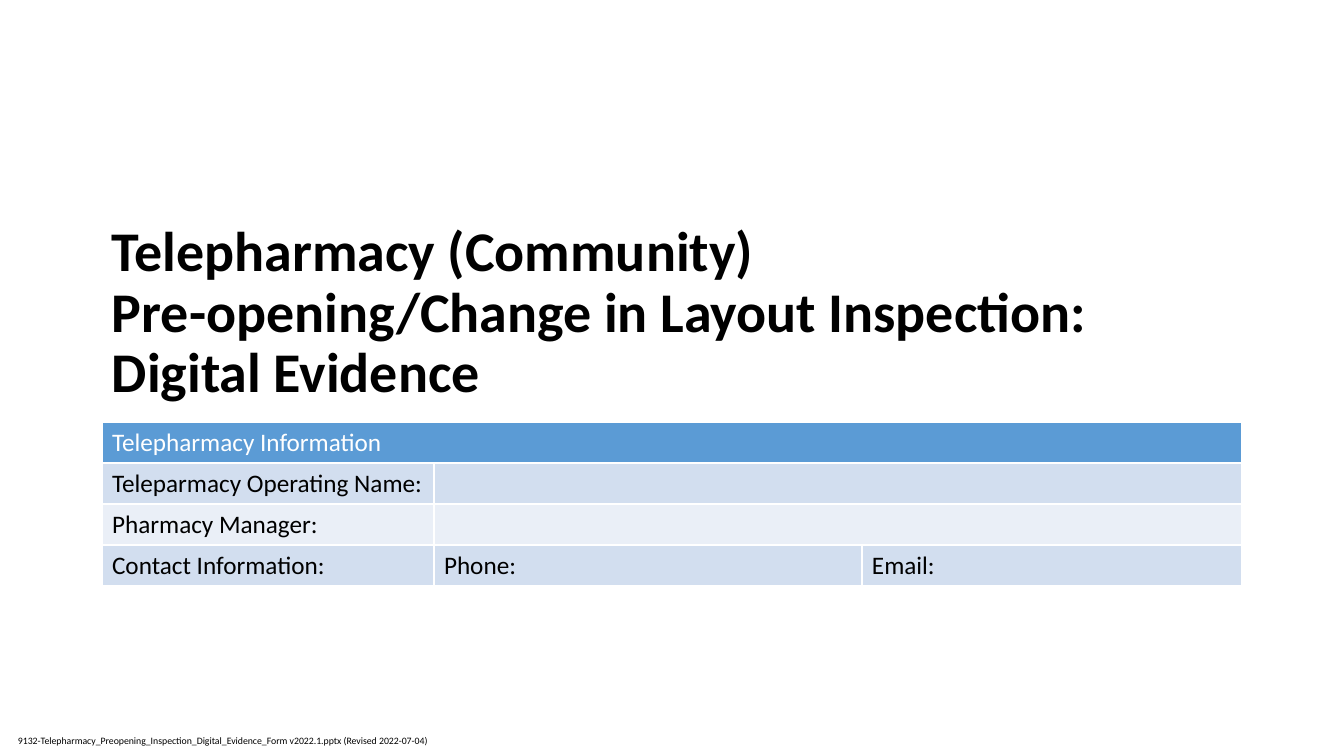
from pptx import Presentation
from pptx.dml.color import RGBColor
from pptx.enum.text import MSO_ANCHOR
from pptx.util import Pt

PX = 914400 / 100.8
TOP, BOTTOM = MSO_ANCHOR.TOP, MSO_ANCHOR.BOTTOM
BLACK = RGBColor(0x00, 0x00, 0x00)
WHITE = RGBColor(0xFF, 0xFF, 0xFF)
BLUE = RGBColor(0x5B, 0x9B, 0xD5)
LIGHT = RGBColor(0xD2, 0xDE, 0xEF)
PALE = RGBColor(0xEA, 0xEF, 0xF7)

TITLE = """Telepharmacy (Community)
Pre-opening/Change in Layout Inspection:
Digital Evidence"""
FOOTER = ("9132-Telepharmacy_Preopening_Inspection_Digital_Evidence_Form "
          "v2022.1.pptx (Revised 2022-07-04)")
ROWS = [
    ["Telepharmacy Information"],
    ["Teleparmacy Operating Name:", ""],
    ["Pharmacy Manager:", ""],
    ["Contact Information:", "Phone:", "Email:"],
]
FILLS = [BLUE, LIGHT, PALE, LIGHT]
COLS = [332, 428, 380]
ROW = 41


def px(*sizes):
    """Turn pixel lengths into whole EMU."""
    return [round(size * PX) for size in sizes]


def write(frame, text, size=18, color=BLACK, bold=False, space=1.0):
    """Put formatted text into the first paragraph of a frame."""
    para = frame.paragraphs[0]
    para.text = text
    para.line_spacing = space
    for run in para.runs:
        font = run.font
        font.name, font.size, font.bold = "Calibri", Pt(size), bold
        font.color.rgb = color


def label(slide, box, text, anchor=TOP, **style):
    """Add a wrapped text box."""
    frame = slide.shapes.add_textbox(*px(*box)).text_frame
    frame.word_wrap = True
    frame.vertical_anchor = anchor
    write(frame, text, **style)


def form(slide, left, top):
    """Add the information table, widening the last cell of short rows."""
    box = px(left, top, sum(COLS), ROW * len(ROWS))
    table = slide.shapes.add_table(len(ROWS), len(COLS), *box).table
    for col, width in zip(table.columns, px(*COLS)):
        col.width = width
    for r, (texts, fill) in enumerate(zip(ROWS, FILLS)):
        table.rows[r].height = px(ROW)[0]
        last = len(texts) - 1
        if len(texts) < len(COLS):
            table.cell(r, last).merge(table.cell(r, len(COLS) - 1))
        for c in range(len(COLS)):
            cell = table.cell(r, c)
            cell.fill.solid()
            cell.fill.fore_color.rgb = fill
            if c <= last:
                write(cell.text_frame, texts[c],
                      color=BLACK if r else WHITE)


def cover(deck):
    """Build the cover slide with footer, title and form."""
    slide = deck.slides.add_slide(deck.slide_layouts[6])
    label(slide, (8, 730, 458, 22), FOOTER, size=7)
    label(slide, (102, 147, 1140, 263), TITLE, anchor=BOTTOM,
          size=40, bold=True, space=0.9)
    form(slide, 102, 422)


def main():
    """Create and save the deck."""
    deck = Presentation()
    deck.slide_width, deck.slide_height = px(1344, 756)
    cover(deck)
    deck.save("out.pptx")


if __name__ == "__main__":
    main()
